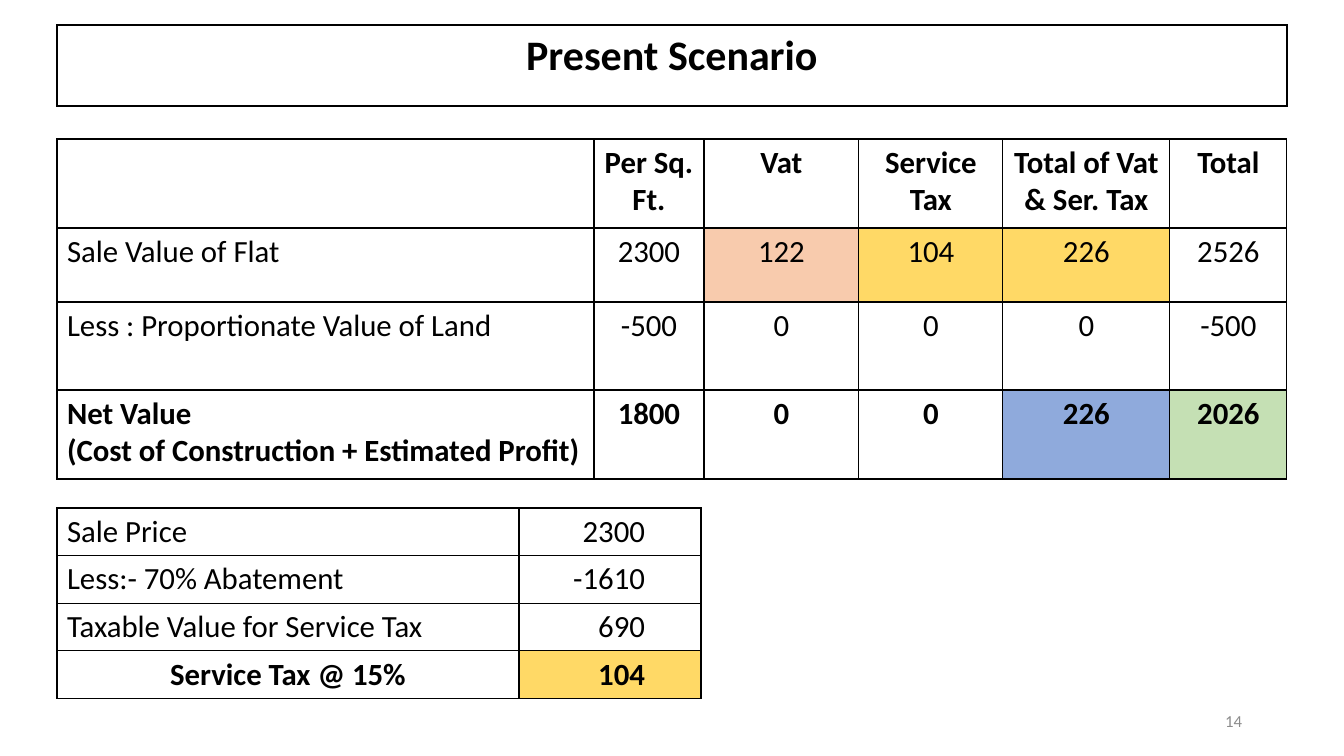
from lxml.etree import SubElement
from pptx import Presentation
from pptx.dml.color import RGBColor
from pptx.enum.text import MSO_ANCHOR, PP_ALIGN
from pptx.oxml.ns import qn
from pptx.util import Emu, Pt

LEFT = 57
BLACK, GREY = "000000", "8C8C8C"
PEACH, YELLOW, BLUE, GREEN = "F8CBAD", "FFD966", "8FAADC", "C5E0B4"

TAX_ROWS = [
    ["", "Per Sq. Ft.", "Vat", "Service Tax", "Total of Vat & Ser. Tax", "Total"],
    ["Sale Value of Flat", "2300", "122", "104", "226", "2526"],
    ["Less : Proportionate Value of Land", "-500", "0", "0", "0", "-500"],
    ["Net Value\n(Cost of Construction + Estimated Profit)",
     "1800", "0", "0", "226", "2026"],
]
TAX_FILLS = {(1, 2): PEACH, (1, 3): YELLOW, (1, 4): YELLOW,
             (3, 4): BLUE, (3, 5): GREEN}
SERVICE_ROWS = [
    ["Sale Price", "2300"],
    ["Less:- 70% Abatement", "-1610"],
    ["Taxable Value for Service Tax", "690"],
    ["Service Tax @ 15%", "104"],
]


def px(n):
    return Emu(round(n * 914400 / 100.8))


def rgb(color):
    return RGBColor.from_string(color)


def write(tf, text, align, size, bold=False, color=BLACK):
    tf.text = text
    for p in tf.paragraphs:
        p.alignment = align
        for name, value in dict(name="Calibri", size=Pt(size), bold=bold).items():
            setattr(p.font, name, value)
        p.font.color.rgb = rgb(color)
        for r in p.runs:
            r.font.color.rgb = rgb(color)


def add_borders(cell):
    """Put a 1 pt black line on all four sides, ahead of the cell's fill."""
    tcPr = cell._tc.get_or_add_tcPr()
    for i, side in enumerate("LRTB"):
        ln = SubElement(tcPr, qn(f"a:ln{side}"), w=str(Pt(1)))
        fill = SubElement(ln, qn("a:solidFill"))
        SubElement(fill, qn("a:srgbClr"), val=BLACK)
        tcPr.insert(i, ln)


def add_grid(s, top, widths, heights, rows, aligns, size=22, bold_rows=(), fills=None):
    """Add a bordered table and return it; aligns holds one value per column."""
    frame = s.shapes.add_table(len(rows), len(widths), px(LEFT), px(top),
                               px(sum(widths)), px(sum(heights)))
    table = frame.table
    table.first_row = table.horz_banding = False
    for col, width in zip(table.columns, widths):
        col.width = px(width)
    for row, height in zip(table.rows, heights):
        row.height = px(height)
    for i, texts in enumerate(rows):
        for j, text in enumerate(texts):
            cell = table.cell(i, j)
            write(cell.text_frame, text, aligns[j], size, i in bold_rows)
            color = (fills or {}).get((i, j))
            if color:
                cell.fill.solid()
                cell.fill.fore_color.rgb = rgb(color)
            else:
                cell.fill.background()
            add_borders(cell)
    return table


def add_page_number(s, text):
    tf = s.shapes.add_textbox(px(950), px(701), px(302), px(40)).text_frame
    tf.word_wrap = True
    tf.vertical_anchor = MSO_ANCHOR.MIDDLE
    write(tf, text, PP_ALIGN.RIGHT, 12, color=GREY)


def main():
    prs = Presentation()
    prs.slide_width, prs.slide_height = px(1344), px(756)
    s = prs.slides.add_slide(prs.slide_layouts[6])

    add_grid(s, 139, [537, 110, 155, 144, 167, 117], [89, 74, 88, 89], TAX_ROWS,
             [PP_ALIGN.LEFT] + [PP_ALIGN.CENTER] * 5, bold_rows=(0, 3), fills=TAX_FILLS)

    service = add_grid(s, 508, [462, 182], [47] * 4, SERVICE_ROWS,
                       [PP_ALIGN.LEFT, PP_ALIGN.RIGHT], bold_rows=(3,),
                       fills={(3, 1): YELLOW})
    for i in range(len(SERVICE_ROWS)):
        service.cell(i, 1).margin_right = px(56)
    service.cell(3, 0).text_frame.paragraphs[0].alignment = PP_ALIGN.CENTER

    add_grid(s, 25, [1230], [81], [["Present Scenario"]], [PP_ALIGN.CENTER],
             size=30, bold_rows=(0,))
    add_page_number(s, "14")
    prs.save("out.pptx")


if __name__ == "__main__":
    main()
